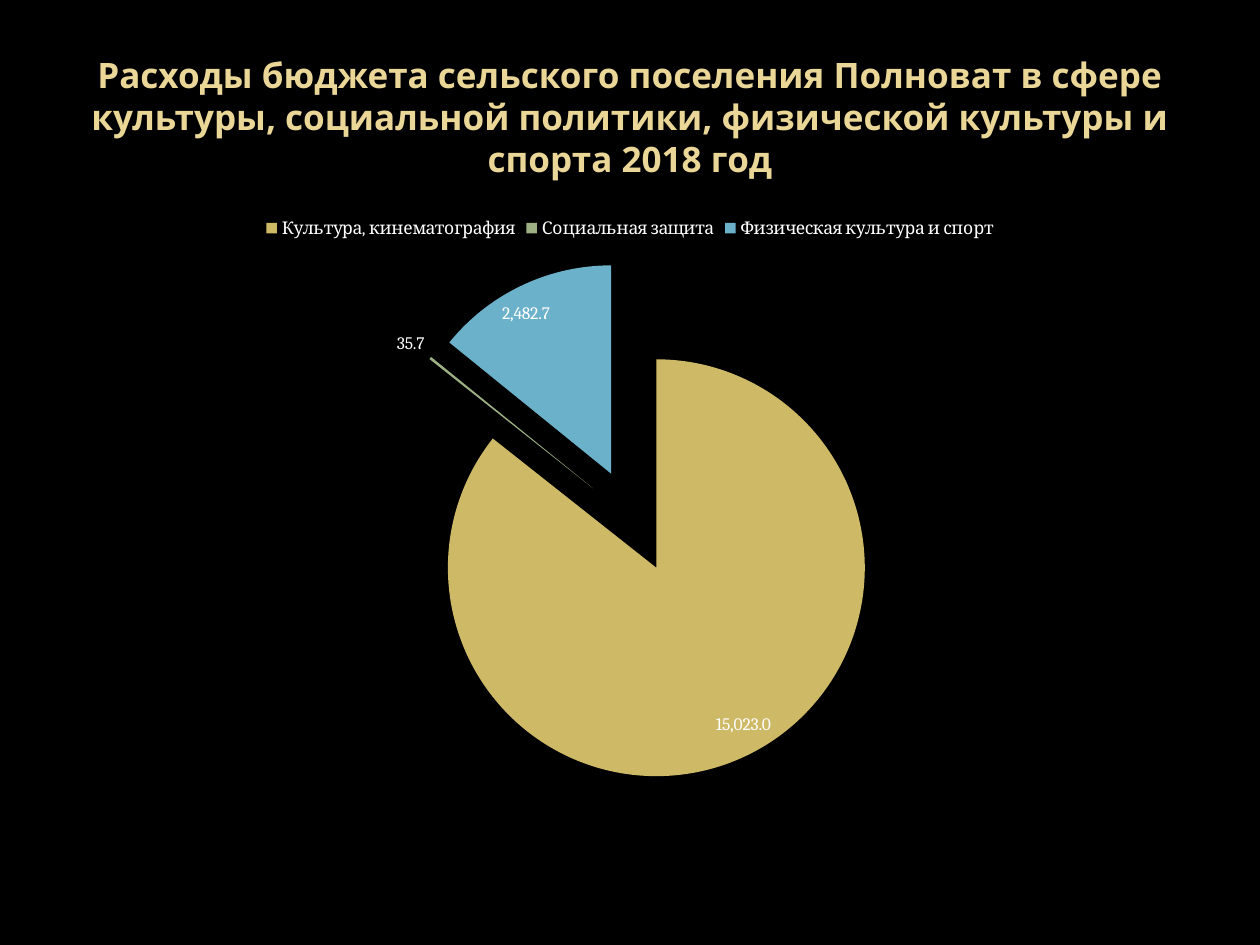
from lxml import etree
from pptx import Presentation
from pptx.chart.data import CategoryChartData
from pptx.dml.color import RGBColor
from pptx.enum.chart import XL_CHART_TYPE as ChartType
from pptx.enum.chart import XL_LABEL_POSITION as LabelPosition
from pptx.enum.chart import XL_LEGEND_POSITION as LegendPosition
from pptx.enum.text import MSO_ANCHOR, PP_ALIGN
from pptx.oxml.ns import qn
from pptx.util import Inches, Pt

COLORS = {
    "background": "000000",
    "title": "EAD696",
    "chart_text": "FFFFFF",
    "culture": "CEB966",
    "welfare": "9CB084",
    "sport": "6BB1C9",
}
TITLE = (
    "Расходы бюджета сельского поселения Полноват в сфере культуры, "
    "социальной политики, физической культуры и спорта 2018 год"
)
EXPENSES = [
    ("Культура, кинематография", 15023, "culture"),
    ("Социальная защита", 35.7, "welfare"),
    ("Физическая культура и спорт", 2482.7, "sport"),
]


def color(name):
    return RGBColor.from_string(COLORS[name])


def style_font(font, name, size, color_name, bold=False):
    font.name = name
    font.size = Pt(size)
    font.bold = bold
    font.color.rgb = color(color_name)


def add_title(page):
    box = page.shapes.add_textbox(Inches(0.5), Inches(0.3), Inches(9), Inches(1.25))
    frame = box.text_frame
    frame.word_wrap = True
    frame.vertical_anchor = MSO_ANCHOR.MIDDLE
    para = frame.paragraphs[0]
    para.text = TITLE
    para.alignment = PP_ALIGN.CENTER
    style_font(para.font, "Noto Sans", 20, "title", bold=True)


def explode(series, percent):
    """Pull every slice away from the centre by a share of the radius."""
    explosion = etree.Element(qn("c:explosion"), val=str(percent))
    series._element.find(qn("c:dPt")).addprevious(explosion)


def add_expense_chart(page):
    data = CategoryChartData(number_format="#,##0.0")
    data.categories = [name for name, _, _ in EXPENSES]
    data.add_series("Series 1", [value for _, value, _ in EXPENSES])
    chart = page.shapes.add_chart(
        ChartType.PIE, Inches(1.3), Inches(1.62), Inches(7.4), Inches(4.72), data
    ).chart
    chart.has_title = False
    style_font(chart.font, "Cambria", 10, "chart_text")

    chart.has_legend = True
    chart.legend.position = LegendPosition.TOP
    chart.legend.include_in_layout = False

    plot = chart.plots[0]
    plot.vary_by_categories = True
    plot.has_data_labels = True
    labels = plot.data_labels
    labels.show_value = True
    labels.show_percentage = False
    labels.number_format = "#,##0.0"
    labels.number_format_is_linked = False
    labels.position = LabelPosition.BEST_FIT

    series = plot.series[0]
    for index, (_, _, color_name) in enumerate(EXPENSES):
        slice_format = series.points[index].format
        slice_format.fill.solid()
        slice_format.fill.fore_color.rgb = color(color_name)
        slice_format.line.fill.background()
    explode(series, 25)


def main():
    deck = Presentation()
    deck.slide_width = Inches(10)
    deck.slide_height = Inches(7.5)
    page = deck.slides.add_slide(deck.slide_layouts[6])
    page.background.fill.solid()
    page.background.fill.fore_color.rgb = color("background")
    add_title(page)
    add_expense_chart(page)
    deck.save("out.pptx")


if __name__ == "__main__":
    main()
